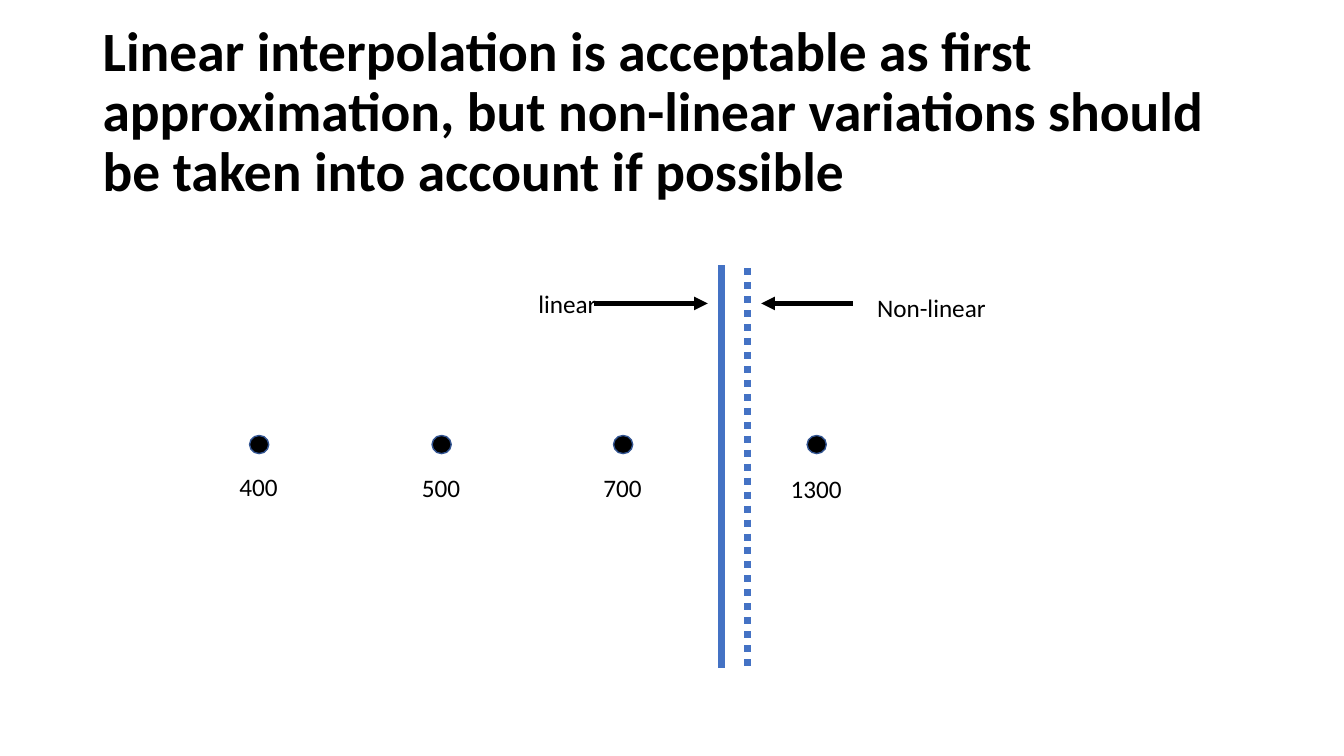
from dataclasses import dataclass

from lxml.etree import SubElement
from pptx import Presentation
from pptx.dml.color import RGBColor
from pptx.enum.dml import MSO_LINE_DASH_STYLE as Dash
from pptx.enum.shapes import MSO_CONNECTOR as Connector
from pptx.enum.shapes import MSO_SHAPE as Shape
from pptx.enum.text import MSO_ANCHOR as Anchor
from pptx.enum.text import PP_ALIGN as Align
from pptx.oxml.ns import qn
from pptx.slide import Slide
from pptx.util import Emu, Pt

EMU_PER_PX = 9144
FONT = "Calibri"
BLACK, BLUE, DARK_BLUE = "000000", "4472C4", "325491"
DOT_TOP, DOT_WIDTH, DOT_HEIGHT = 432, 19, 18
LABEL_HEIGHT = 40
ARROW_Y = 301


@dataclass(frozen=True)
class Label:
    text: str
    left: int
    top: int
    width: int
    height: int = LABEL_HEIGHT
    size: float = 18
    bold: bool = False
    wrap: bool = False
    spacing: float = 1.0
    anchor: Anchor = Anchor.TOP
    align: Align = Align.LEFT


@dataclass(frozen=True)
class Dot:
    number: str
    center: int
    label_top: int
    label_width: int


@dataclass(frozen=True)
class Line:
    start: tuple[int, int]
    end: tuple[int, int]
    color: str
    weight: float
    dash: Dash | None = None
    arrow: bool = False


TITLE = Label(
    "Linear interpolation is acceptable as first approximation, "
    "but non-linear variations should be taken into account if possible",
    92, 40, 1150, 145, size=39.6, bold=True, wrap=True, spacing=0.9,
    anchor=Anchor.MIDDLE,
)
DOTS = [
    Dot("400", 257, 463, 59),
    Dot("500", 438, 464, 59),
    Dot("700", 618, 464, 59),
    Dot("1300", 810, 465, 71),
]
LINES = [
    Line((716, 263), (716, 663), BLUE, 5),
    Line((741, 266), (741, 666), BLUE, 5, dash=Dash.ROUND_DOT),
    Line((589, ARROW_Y), (702, ARROW_Y), BLACK, 3.25, arrow=True),
    Line((846, ARROW_Y), (755, ARROW_Y), BLACK, 3.25, arrow=True),
]
LINE_LABELS = [Label("Non-linear", 860, 285, 129), Label("linear", 524, 281, 79)]


def px(length: int) -> Emu:
    """Convert slide pixels to EMU."""
    return Emu(length * EMU_PER_PX)


def rgb(color: str) -> RGBColor:
    """Convert a hex string to a colour."""
    return RGBColor.from_string(color)


def add_label(slide: Slide, label: Label) -> None:
    """Add one text box."""
    box = slide.shapes.add_textbox(
        px(label.left), px(label.top), px(label.width), px(label.height)
    )
    frame = box.text_frame
    frame.text = label.text
    frame.word_wrap = label.wrap
    frame.vertical_anchor = label.anchor
    paragraph = frame.paragraphs[0]
    paragraph.alignment = label.align
    paragraph.line_spacing = label.spacing
    font = paragraph.runs[0].font
    font.name, font.size, font.bold = FONT, Pt(label.size), label.bold
    font.color.rgb = rgb(BLACK)


def add_dot(slide: Slide, dot: Dot) -> None:
    """Add a dot with its number centred below."""
    shape = slide.shapes.add_shape(
        Shape.OVAL, px(dot.center) - px(DOT_WIDTH) // 2, px(DOT_TOP),
        px(DOT_WIDTH), px(DOT_HEIGHT),
    )
    shape.shadow.inherit = False
    shape.fill.solid()
    shape.fill.fore_color.rgb = rgb(BLACK)
    shape.line.color.rgb = rgb(DARK_BLUE)
    shape.line.width = Pt(1)
    left = dot.center - dot.label_width // 2 - 1
    add_label(slide, Label(dot.number, left, dot.label_top,
                           dot.label_width, align=Align.CENTER))


def add_line(slide: Slide, line: Line) -> None:
    """Add a straight line, dashed or with an arrowhead where asked."""
    connector = slide.shapes.add_connector(
        Connector.STRAIGHT, *map(px, line.start + line.end)
    )
    connector.line.color.rgb = rgb(line.color)
    connector.line.width = Pt(line.weight)
    if line.dash is not None:
        connector.line.dash_style = line.dash
    properties = connector.element.spPr
    if line.arrow:
        SubElement(properties.find(qn("a:ln")), qn("a:tailEnd"), type="triangle")
    SubElement(properties, qn("a:effectLst"))


def main() -> None:
    """Build the slide and save it."""
    presentation = Presentation()
    presentation.slide_width, presentation.slide_height = px(1333), px(750)
    slide = presentation.slides.add_slide(presentation.slide_layouts[6])
    add_label(slide, TITLE)
    for dot in DOTS:
        add_dot(slide, dot)
    for line in LINES:
        add_line(slide, line)
    for label in LINE_LABELS:
        add_label(slide, label)
    presentation.save("out.pptx")


if __name__ == "__main__":
    main()
